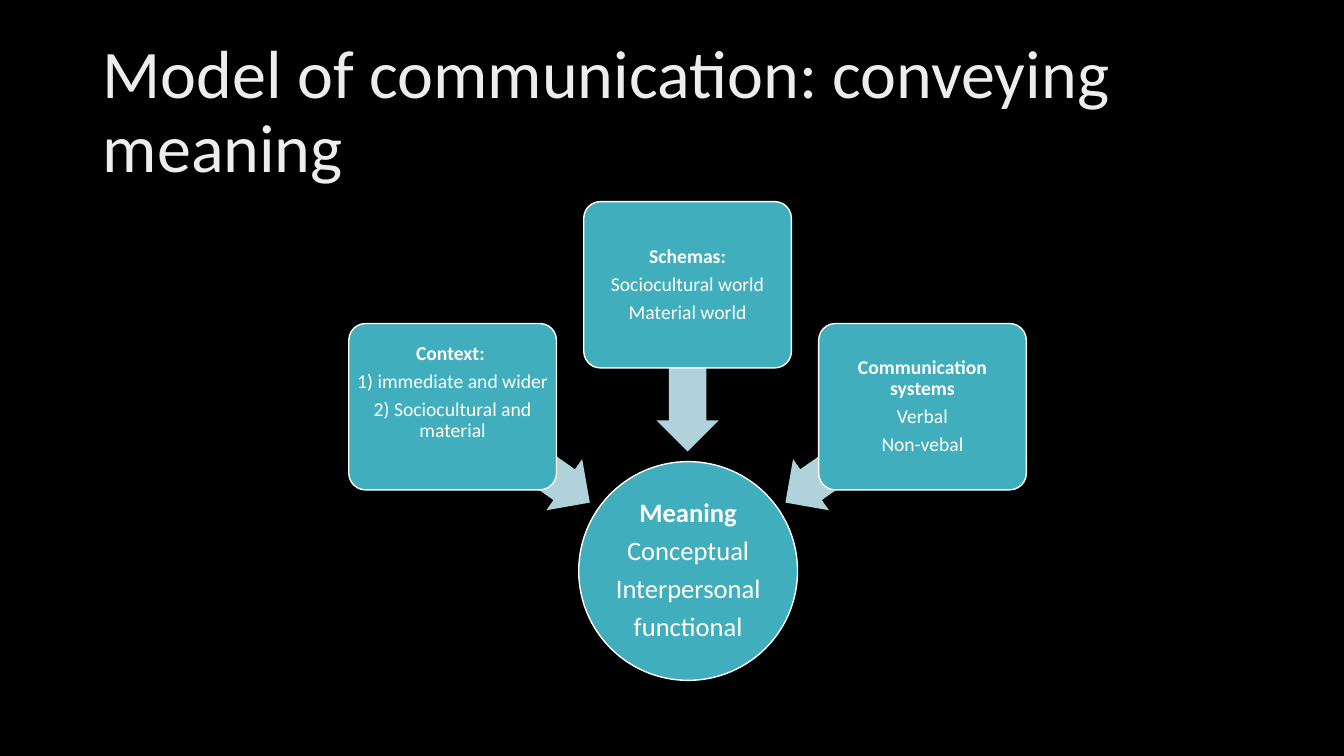
from dataclasses import dataclass

from pptx import Presentation
from pptx.dml.color import RGBColor
from pptx.enum.shapes import MSO_SHAPE
from pptx.enum.text import MSO_ANCHOR, MSO_AUTO_SIZE, PP_ALIGN
from pptx.oxml import parse_xml
from pptx.oxml.ns import nsdecls
from pptx.util import Emu, Pt

PX = 9144  # EMU in one px, 100 px to the inch
FONT = "Calibri"
COLORS = {"background": "000000", "node": "41AEBD", "arrow": "B0D3DB", "white": "FFFFFF"}
TITLE_STOPS = {0: "BFBFBF", 28: "EDEDED", 100: "FFFFFF"}
BOX_W, BOX_H, BOX_LEFT, BOX_STEP = 206, 165, 346, 233
ARROW_W, ARROW_H, ARROW_LEFT, ARROW_STEP = 166, 62, 434, 165
FIRST_ANGLE, ANGLE_STEP = 215, 55


@dataclass
class Node:
    heading: str
    lines: list[str]
    top: int
    arrow_top: int = 0
    inset: int = 3
    bottom_inset: int = 3
    size: int = 14


SOURCES = [
    Node("Context: ", ["1) immediate and wider", "2) Sociocultural and material"],
         321, 420, bottom_inset=31),
    Node("Schemas:", ["Sociocultural world", "Material world"], 200, 334),
    Node("Communication systems", ["Verbal", "Non-vebal"], 321, 420),
]
MEANING = Node("Meaning", ["Conceptual", "Interpersonal", "functional"], 458,
               inset=1, bottom_inset=1, size=19)


def px(value: int) -> Emu:
    return Emu(value * PX)


def color(name: str) -> RGBColor:
    return RGBColor.from_string(COLORS[name])


def add_filled(s, kind: MSO_SHAPE, box: tuple[int, int, int, int], fill: str):
    sp = s.shapes.add_shape(kind, *map(px, box))
    sp.shadow.inherit = False
    sp.fill.solid()
    sp.fill.fore_color.rgb = color(fill)
    return sp


def add_node(s, node: Node, kind: MSO_SHAPE, left: int, width: int, height: int):
    sp = add_filled(s, kind, (left, node.top, width, height), "node")
    sp.line.color.rgb = color("white")
    sp.line.width = Pt(1)
    tf = sp.text_frame
    tf.word_wrap = True
    tf.vertical_anchor = MSO_ANCHOR.MIDDLE
    tf.margin_left = tf.margin_right = tf.margin_top = px(node.inset)
    tf.margin_bottom = px(node.bottom_inset)
    for i, text in enumerate([node.heading, *node.lines]):
        p = tf.paragraphs[0] if i == 0 else tf.add_paragraph()
        p.alignment = PP_ALIGN.CENTER
        p.line_spacing = 0.9
        p.space_after = Pt(0.35 * node.size)
        r = p.add_run()
        r.text = text
        r.font.name = FONT
        r.font.size = Pt(node.size)
        r.font.bold = i == 0
        r.font.color.rgb = color("white")
    return sp


def add_arrow(s, index: int, top: int) -> None:
    left = ARROW_LEFT + index * ARROW_STEP
    sp = add_filled(s, MSO_SHAPE.LEFT_ARROW, (left, top, ARROW_W, ARROW_H), "arrow")
    sp.line.fill.background()
    sp.adjustments[0], sp.adjustments[1] = 0.6, 0.5
    sp.rotation = FIRST_ANGLE + index * ANGLE_STEP


def set_title(s, text: str) -> None:
    title = s.shapes.title
    title.left, title.top, title.width, title.height = map(px, (92, 40, 1150, 145))
    tf = title.text_frame
    tf.word_wrap = True
    tf.auto_size = MSO_AUTO_SIZE.NONE
    tf.vertical_anchor = MSO_ANCHOR.MIDDLE
    p = tf.paragraphs[0]
    p.alignment = PP_ALIGN.LEFT
    p.line_spacing = 0.9
    r = p.add_run()
    r.text = text
    r.font.name = FONT
    r.font.size = Pt(48.6)
    # Gradient text fill
    stops = "".join(f'<a:gs pos="{pos * 1000}"><a:srgbClr val="{rgb}"/></a:gs>'
                    for pos, rgb in TITLE_STOPS.items())
    gradient = parse_xml(f'<a:gradFill {nsdecls("a")}><a:gsLst>{stops}</a:gsLst>'
                         '<a:lin ang="4800000" scaled="0"/></a:gradFill>')
    r.font._element.insert(0, gradient)


def main() -> None:
    prs = Presentation()
    prs.slide_width, prs.slide_height = px(1333), px(750)
    s = prs.slides.add_slide(prs.slide_layouts[5])
    s.background.fill.solid()
    s.background.fill.fore_color.rgb = color("background")
    set_title(s, "Model of communication: conveying meaning")

    # Central meaning, then each source over its arrow
    add_node(s, MEANING, MSO_SHAPE.OVAL, 574, 217, 217)
    for i, node in enumerate(SOURCES):
        add_arrow(s, i, node.arrow_top)
        sp = add_node(s, node, MSO_SHAPE.ROUNDED_RECTANGLE,
                      BOX_LEFT + i * BOX_STEP, BOX_W, BOX_H)
        sp.adjustments[0] = 0.1

    prs.save("out.pptx")


if __name__ == "__main__":
    main()
